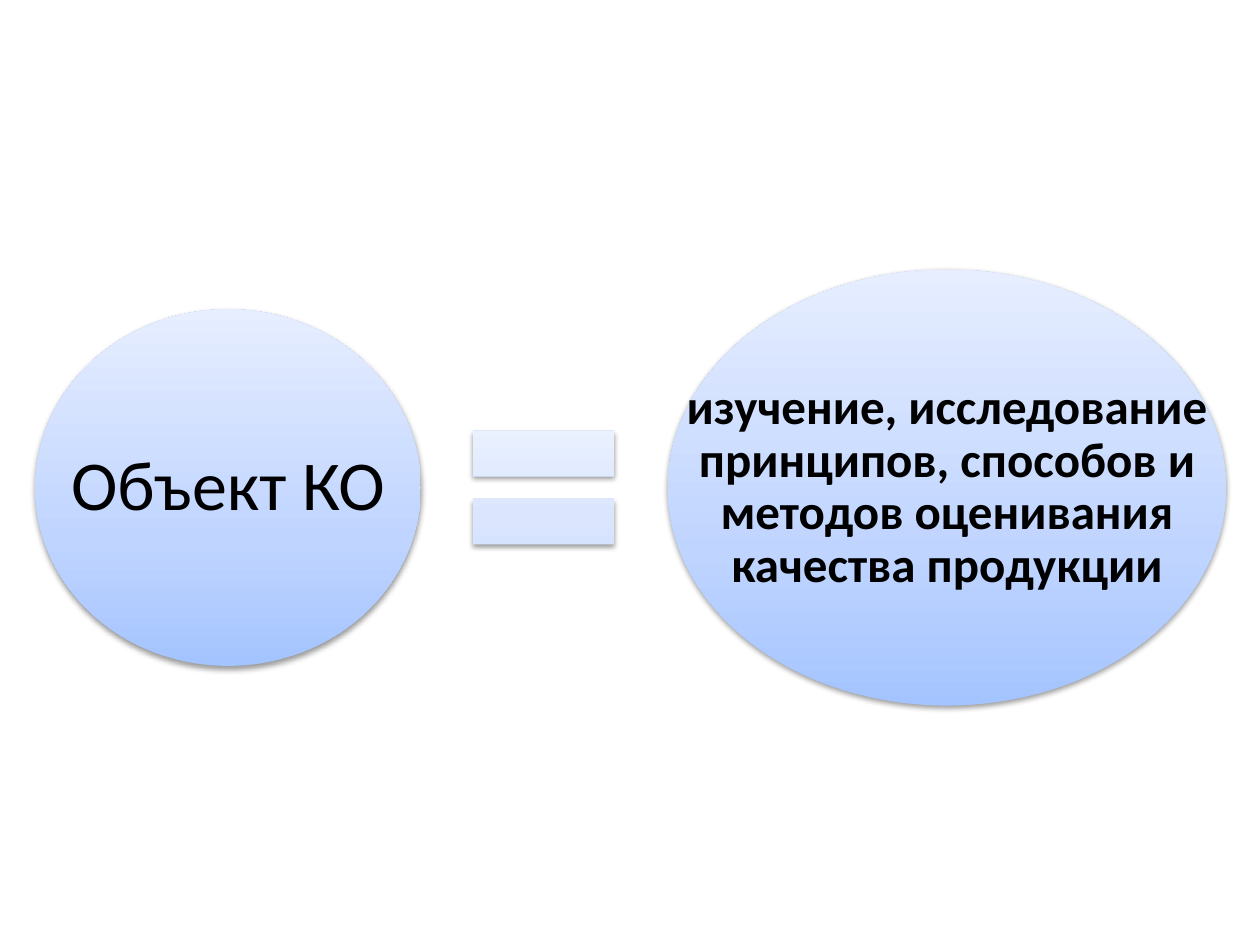
"""Build a slide that equates the object of KO with its definition."""
from copy import deepcopy
from dataclasses import dataclass

from pptx import Presentation
from pptx.dml.color import RGBColor
from pptx.enum.shapes import MSO_SHAPE as Shape
from pptx.enum.text import MSO_ANCHOR as Anchor, PP_ALIGN as Align
from pptx.oxml import parse_xml
from pptx.oxml.ns import nsdecls, qn
from pptx.util import Inches, Pt

BLACK = RGBColor(0x00, 0x00, 0x00)
OVAL_COLORS = (RGBColor(0xA4, 0xC4, 0xFF), RGBColor(0xBF, 0xD4, 0xFF), RGBColor(0xE6, 0xEE, 0xFF))
EQUAL_COLORS = (RGBColor(0xCD, 0xDD, 0xFE), RGBColor(0xDB, 0xE6, 0xFE), RGBColor(0xF0, 0xF5, 0xFF))
POSITIONS = (0, 0.35, 1)
MIDDLE = 3.87
SHADOW = (
    f'<a:effectLst {nsdecls("a")}>'
    f'<a:outerShdw blurRad="{Pt(3.1)}" dist="{Pt(1.6)}" dir="5400000" rotWithShape="0">'
    f'<a:srgbClr val="{BLACK}"><a:alpha val="38000"/></a:srgbClr>'
    '</a:outerShdw></a:effectLst>'
)


@dataclass
class Part:
    kind: Shape
    left: float
    width: float
    height: float
    colors: tuple[RGBColor, ...]
    text: str = ""
    size: int = 0
    bold: bool = False
    inset: float = 0

    @property
    def box(self) -> tuple[int, ...]:
        top = MIDDLE - self.height / 2
        return tuple(Inches(v) for v in (self.left, top, self.width, self.height))


PARTS = (
    Part(Shape.OVAL, 0.28, 3.06, 2.83, OVAL_COLORS, "Объект КО", 40, False, 0.06),
    Part(Shape.MATH_EQUAL, 3.55, 1.53, 1.53, EQUAL_COLORS),
    Part(Shape.OVAL, 5.3, 4.43, 3.46, OVAL_COLORS,
         "изучение, исследование принципов, способов и методов оценивания качества продукции",
         28, True, 0.04),
)


def draw_shape(shapes, part: Part) -> None:
    sp = shapes.add_shape(part.kind, *part.box)
    sp.line.fill.background()
    sp.fill.gradient()
    sp.fill.gradient_angle = 90
    props = sp.element.spPr
    stops = props.find(f".//{qn('a:gsLst')}")
    stops.insert(1, deepcopy(stops[0]))
    for stop, color, position in zip(sp.fill.gradient_stops, part.colors, POSITIONS):
        stop.color.rgb = color
        stop.position = position
    props.append(parse_xml(SHADOW))


def draw_text(shapes, part: Part) -> None:
    tf = shapes.add_textbox(*part.box).text_frame
    tf.word_wrap = True
    tf.vertical_anchor = Anchor.MIDDLE
    tf.margin_left = tf.margin_right = tf.margin_top = tf.margin_bottom = Inches(part.inset)
    tf.text = part.text
    p = tf.paragraphs[0]
    p.alignment = Align.CENTER
    p.line_spacing = 0.9
    font = p.runs[0].font
    font.name = "Calibri"
    font.size = Pt(part.size)
    font.bold = part.bold
    font.color.rgb = BLACK


def main() -> None:
    prs = Presentation()
    prs.slide_width, prs.slide_height = Inches(10), Inches(7.5)
    s = prs.slides.add_slide(prs.slide_layouts[6])
    for part in PARTS:
        draw_shape(s.shapes, part)
        if part.text:
            draw_text(s.shapes, part)
    prs.save("out.pptx")


if __name__ == "__main__":
    main()
